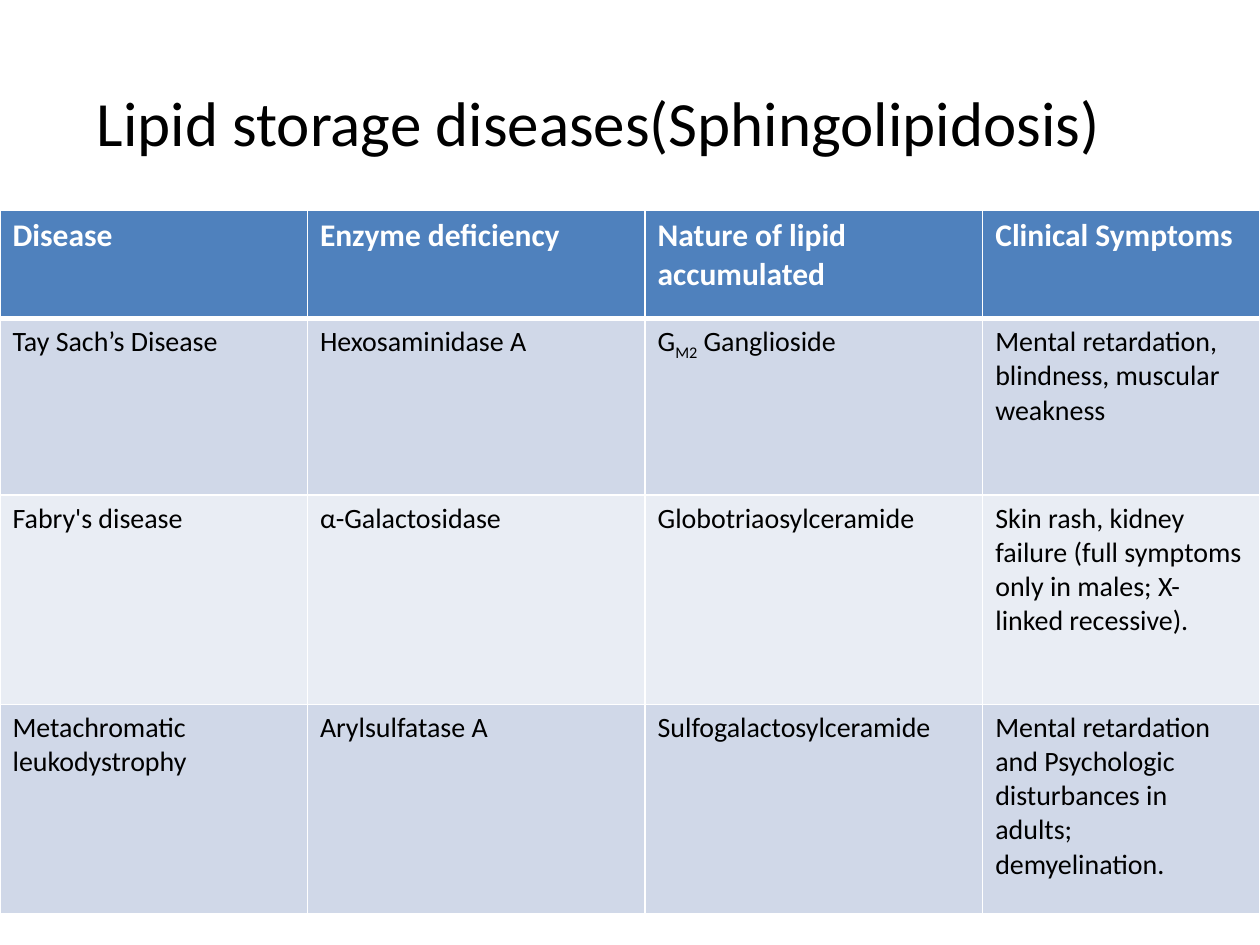
from lxml import etree
from pptx import Presentation
from pptx.dml.color import RGBColor
from pptx.enum.text import MSO_ANCHOR
from pptx.oxml.ns import qn
from pptx.util import Inches, Pt

MIDDLE = MSO_ANCHOR.MIDDLE
BLACK = RGBColor(0x00, 0x00, 0x00)
WHITE = RGBColor(0xFF, 0xFF, 0xFF)
HEADER_BLUE = RGBColor(0x4F, 0x81, 0xBD)
BAND_FILLS = (RGBColor(0xE9, 0xED, 0xF4), RGBColor(0xD0, 0xD8, 0xE8))
FONT_NAME = "Calibri"

COLUMN_WIDTHS = (2.44, 2.68, 2.68, 2.2)
ROW_HEIGHTS = (0.86, 1.4, 1.66, 1.66)
DISEASE_ROWS = (
    ("Disease", "Enzyme deficiency", "Nature of lipid accumulated", "Clinical Symptoms"),
    ("Tay Sach’s Disease", "Hexosaminidase A", ("G", "M2", " Ganglioside"),
     "Mental retardation, blindness, muscular weakness"),
    ("Fabry's disease", "α-Galactosidase", "Globotriaosylceramide",
     "Skin rash, kidney failure (full symptoms only in males; X-linked recessive)."),
    ("Metachromatic leukodystrophy", "Arylsulfatase A", "Sulfogalactosylceramide",
     "Mental retardation and Psychologic disturbances in adults; demyelination."),
)


def write_text(text_frame, text, size, color=BLACK, bold=False):
    """Write a string, or a tuple of pieces whose every second one is a subscript."""
    text_frame.word_wrap = True
    pieces = (text,) if isinstance(text, str) else text
    paragraph = text_frame.paragraphs[0]
    for index, piece in enumerate(pieces):
        run = paragraph.add_run()
        run.text = piece
        run.font.name = FONT_NAME
        run.font.size = Pt(size)
        run.font.bold = bold
        run.font.color.rgb = color
        if index % 2:
            run._r.get_or_add_rPr().set("baseline", "-25000")


def set_borders(cell, top, bottom):
    """Give a cell white borders, with top and bottom widths in points."""
    properties = cell._tc.get_or_add_tcPr()
    for side, width in (("L", 1), ("R", 1), ("T", top), ("B", bottom)):
        line = etree.SubElement(properties, qn(f"a:ln{side}"), w=str(Pt(width)))
        fill = etree.SubElement(line, qn("a:solidFill"))
        etree.SubElement(fill, qn("a:srgbClr"), val=str(WHITE))


def add_title(slide, left, top, width, height):
    """Place the slide title in the given box."""
    shape = slide.shapes.add_textbox(left, top, width, height)
    shape.text_frame.vertical_anchor = MIDDLE
    write_text(shape.text_frame, "Lipid storage diseases(Sphingolipidosis)", 36)


def add_disease_table(slide, left, top, width, height):
    """Place the disease table, sharing the box among its columns and rows."""
    shape = slide.shapes.add_table(
        len(ROW_HEIGHTS), len(COLUMN_WIDTHS), left, top, width, height)
    table = shape.table
    for column, share in zip(table.columns, COLUMN_WIDTHS):
        column.width = int(width * share / sum(COLUMN_WIDTHS))
    for row, share in zip(table.rows, ROW_HEIGHTS):
        row.height = int(height * share / sum(ROW_HEIGHTS))
    for row_index, texts in enumerate(DISEASE_ROWS):
        is_header = row_index == 0
        for column_index, text in enumerate(texts):
            cell = table.cell(row_index, column_index)
            set_borders(cell, top=3 if row_index == 1 else 1, bottom=3 if is_header else 1)
            cell.fill.solid()
            cell.fill.fore_color.rgb = HEADER_BLUE if is_header else BAND_FILLS[row_index % 2]
            write_text(cell.text_frame, text, size=18 if is_header else 16,
                       color=WHITE if is_header else BLACK, bold=is_header)


def main():
    """Build and save the presentation."""
    presentation = Presentation()
    presentation.slide_width = Inches(10)
    presentation.slide_height = Inches(7.5)
    slide = presentation.slides.add_slide(presentation.slide_layouts[6])
    add_title(slide, Inches(0.67), Inches(0.42), Inches(8.5), Inches(1.08))
    add_disease_table(slide, Inches(0), Inches(1.67), Inches(10), Inches(5.58))
    presentation.save("out.pptx")


if __name__ == "__main__":
    main()
